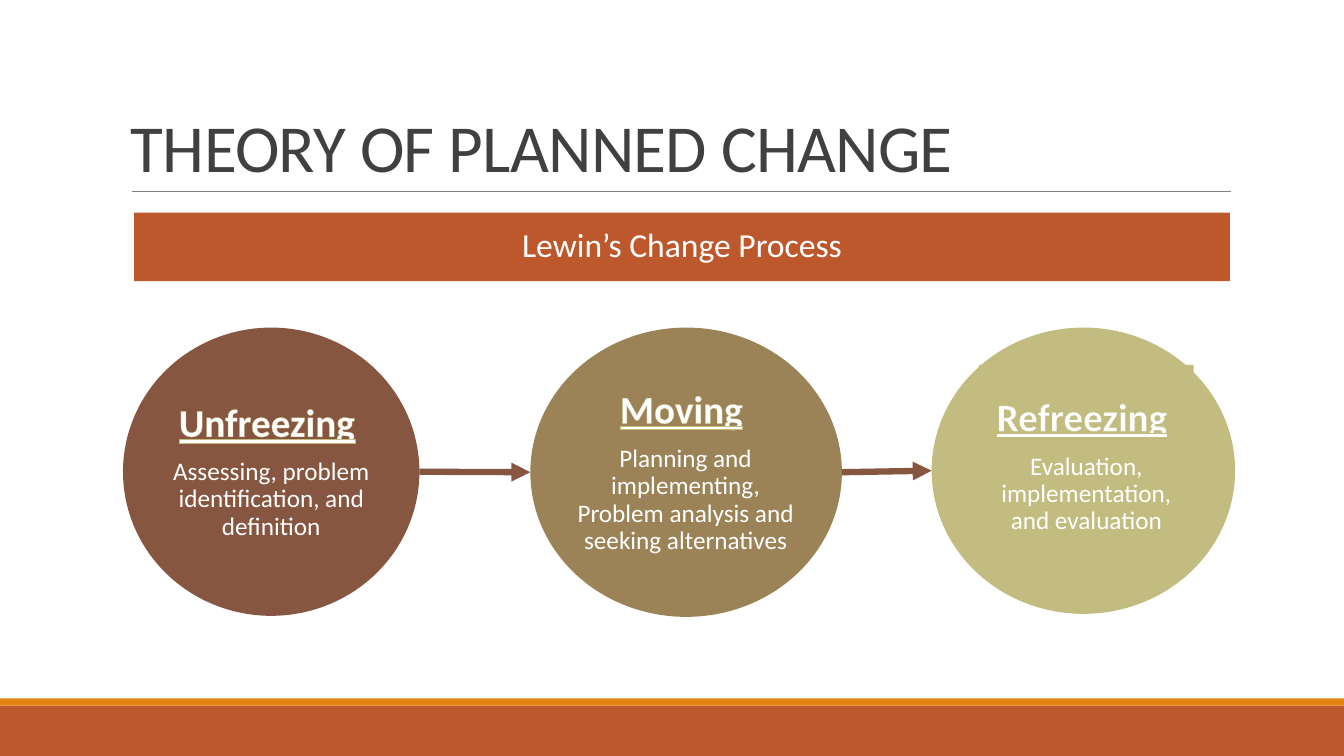
from lxml import etree
from pptx import Presentation
from pptx.dml.color import RGBColor
from pptx.enum.shapes import MSO_CONNECTOR, MSO_SHAPE
from pptx.enum.text import MSO_ANCHOR, PP_ALIGN
from pptx.oxml.ns import qn
from pptx.util import Inches, Pt

RECT, ELLIPSE = MSO_SHAPE.RECTANGLE, MSO_SHAPE.OVAL
STRAIGHT = MSO_CONNECTOR.STRAIGHT
MIDDLE, BOTTOM = MSO_ANCHOR.MIDDLE, MSO_ANCHOR.BOTTOM
LEFT, CENTER = PP_ALIGN.LEFT, PP_ALIGN.CENTER

COLORS = {
    "rust": "BD582C",
    "orange": "E48312",
    "brown": "865640",
    "tan": "9B8357",
    "sage": "C2BC80",
    "rule": "808080",
    "title": "404040",
    "white": "FFFFFF",
}

# name, description, colour, circle box, text box
STAGES = [
    ("Unfreezing", "Assessing, problem identification, and definition",
     "brown", (1.22, 3.25, 2.94, 2.86), (1.65, 3.67, 2.08, 2.02)),
    ("Moving", "Planning and implementing, Problem analysis and seeking alternatives",
     "tan", (5.26, 3.25, 3.09, 2.87), (5.71, 3.67, 2.18, 2.03)),
    ("Refreezing", "Evaluation, implementation, and evaluation",
     "sage", (9.24, 3.25, 3.01, 2.84), (9.71, 3.62, 2.13, 2.01)),
]


def rgb(color):
    return RGBColor.from_string(COLORS[color])


def add_run(paragraph, text, size, color="white", bold=False, underline=False,
            outline=None, tracking=None):
    run = paragraph.add_run()
    run.text = text
    font = run.font
    font.name, font.size, font.bold, font.underline = "Calibri", Pt(size), bold, underline
    font.color.rgb = rgb(color)
    properties = run._r.get_or_add_rPr()
    if tracking is not None:
        properties.set("spc", str(round(tracking * 100)))
    if outline:
        edge = etree.Element(qn("a:ln"), w=str(Pt(0.8)))
        fill = etree.SubElement(edge, qn("a:solidFill"))
        etree.SubElement(fill, qn("a:srgbClr"), val=COLORS[outline])
        properties.insert(0, edge)


class ChangeSlide:
    def __init__(self, presentation):
        self.slide = presentation.slides.add_slide(presentation.slide_layouts[6])

    def block(self, box, color, kind=RECT):
        shape = self.slide.shapes.add_shape(kind, *map(Inches, box))
        shape.shadow.inherit = False
        shape.fill.solid()
        shape.fill.fore_color.rgb = rgb(color)
        shape.line.fill.background()
        return shape

    def set_text(self, shape, paragraphs, inset, anchor=MIDDLE, align=CENTER, spacing=0.9):
        """Fill a shape with paragraphs, each a list of (text, format) runs."""
        frame = shape.text_frame
        frame.word_wrap = True
        frame.vertical_anchor = anchor
        frame.margin_left = frame.margin_right = Inches(inset[0])
        frame.margin_top = frame.margin_bottom = Inches(inset[1])
        for index, runs in enumerate(paragraphs):
            paragraph = frame.add_paragraph() if index else frame.paragraphs[0]
            paragraph.alignment = align
            paragraph.line_spacing = spacing
            paragraph.space_after = Pt(0.35 * runs[0][1]["size"])
            for text, style in runs:
                add_run(paragraph, text, **style)

    def title(self, text, box):
        heading = self.slide.shapes.add_textbox(*map(Inches, box))
        style = dict(size=48, color="title", tracking=-0.5)
        self.set_text(heading, [[(text, style)]], (0.1, 0.05), BOTTOM, LEFT, 0.85)

    def line(self, start, end, color, width, arrow=False):
        connector = self.slide.shapes.add_connector(
            STRAIGHT, *map(Inches, (*start, *end)))
        connector.line.color.rgb = rgb(color)
        connector.line.width = Pt(width)
        properties = connector._element.spPr
        if arrow:
            etree.SubElement(properties.find(qn("a:ln")), qn("a:tailEnd"),
                             type="triangle")
        etree.SubElement(properties, qn("a:effectLst"))

    def stage(self, name, description, color, circle, text_box):
        self.block(circle, color, ELLIPSE)
        heading = dict(size=28, bold=True)
        self.set_text(self.block(text_box, color), [
            [(name, dict(heading, underline=True, outline="sage")), (" ", heading)],
            [(description, dict(size=18))],
        ], (0.01, 0.01))


def main():
    presentation = Presentation()
    presentation.slide_width, presentation.slide_height = Inches(13.33), Inches(7.5)
    slide = ChangeSlide(presentation)

    slide.block((0, 7, 13.33, 0.5), "rust")
    slide.block((0, 6.93, 13.33, 0.07), "orange")
    slide.line((1.31, 1.9), (12.21, 1.9), "rule", 0.5)
    slide.title("THEORY OF PLANNED CHANGE", (1.2, 0.31, 11, 1.59))

    banner = slide.block((1.33, 2.11, 10.87, 0.68), "rust")
    slide.set_text(banner, [[("Lewin’s Change Process", dict(size=24))]], (0.02, 0.02))

    for stage in STAGES:
        slide.stage(*stage)
    circles = [stage[3] for stage in STAGES]
    for (left, top, width, height), (next_left, next_top, _, next_height) in zip(
            circles, circles[1:]):
        slide.line((left + width, top + height / 2),
                   (next_left, next_top + next_height / 2), "brown", 4.5, arrow=True)

    presentation.save("out.pptx")


if __name__ == "__main__":
    main()
